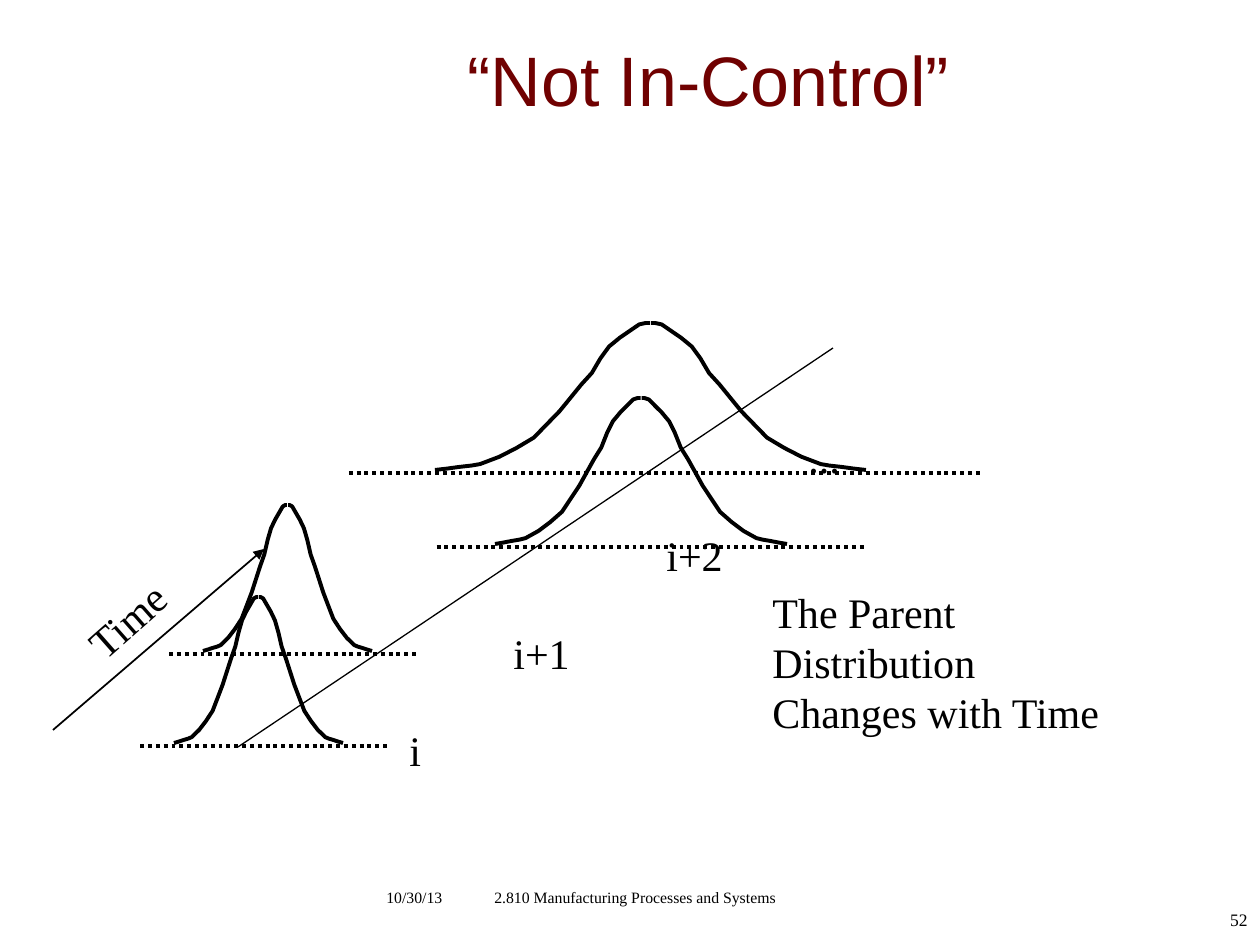
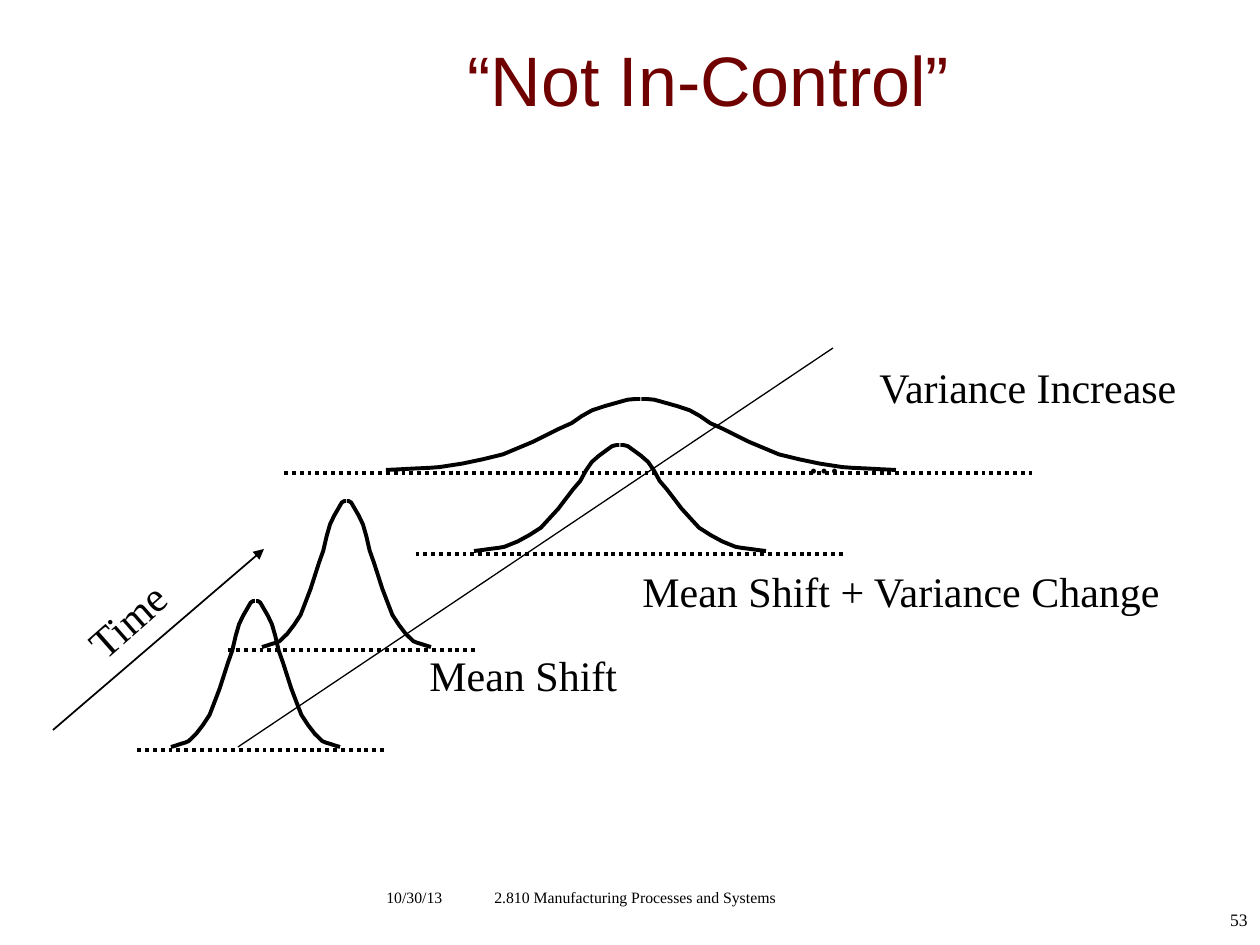
import pptx
import pptx.util
import pptx.dml.color
import pptx.enum.dml
import pptx.enum.shapes
import pptx.enum.text
import pptx.oxml
import pptx.oxml.ns

BLACK = pptx.dml.color.RGBColor(0x00, 0x00, 0x00)
MAROON = pptx.dml.color.RGBColor(0x70, 0x01, 0x01)
SERIF = "Times New Roman"
SANS = "Arial"
ALIGN = pptx.enum.text.PP_ALIGN
DOTS = pptx.enum.dml.MSO_LINE.ROUND_DOT
SCALE = 914400 / 126  # EMU in one px

TITLE = "“Not In-Control”"
TITLE_BOX = (231, 21, 955, 116)
FIRST = 52

# text, box (left, top, width, height), size, alignment
FOOT = [
    ("2.810 Manufacturing Processes and Systems", (252, 882, 766, 42), 9, ALIGN.CENTER),
    ("10/30/13", (374, 882, 179, 32), 9, ALIGN.LEFT),
]
PAGE_BOX = (1155, 903, 105, 42)

DEPTH = (238, 747, 833, 348)
ARROW = (53, 730, 264, 549)
TIME_BOX = (71, 588, 113, 63)
TIME_TURN = 318.6
MORE_BOX = (796, 425, 57, 63)

# bells: left, top, width, height; labels: text, box, wrap
SLIDES = [
    {
        "bells": [(174, 597, 169, 146), (203, 505, 169, 146),
                  (495, 398, 292, 146), (435, 323, 431, 147)],
        "labels": [
            ("i", (397, 718, 37, 63), False),
            ("i+1", (501, 621, 82, 63), False),
            ("i+2", (654, 523, 82, 63), False),
            ("The Parent Distribution Changes with Time", (760, 580, 367, 164), True),
        ],
    },
    {
        "bells": [(171, 601, 169, 146), (262, 501, 169, 146),
                  (474, 445, 292, 106), (386, 399, 510, 71)],
        "labels": [
            ("Mean Shift", (417, 643, 213, 63), False),
            ("Mean Shift + Variance Change", (630, 559, 548, 63), False),
            ("Variance Increase", (867, 355, 328, 63), False),
        ],
    },
]

# Half a bell from foot to peak, in percent of its width and of its drop
RUN = [0, 6, 11, 17, 21, 30, 38, 46, 52, 58, 63, 68, 73, 77, 81, 86, 91, 93, 95, 98, 100]
DROP = [100, 99, 98, 97, 96, 91, 85, 78, 69, 60, 51, 42, 34, 24, 16, 10, 5, 3, 1, 0, 0]


def emu(*vals):
    return [round(val * SCALE) for val in vals]


def style(para, size, font, color, align=ALIGN.LEFT):
    para.alignment = align
    para.font.size = pptx.util.Pt(size)
    para.font.name = font
    para.font.color.rgb = color


def ink(line, width):
    line.color.rgb = BLACK
    line.width = pptx.util.Pt(width)


def write(slide, text, box, size=24, align=ALIGN.LEFT, wrap=True):
    shape = slide.shapes.add_textbox(*emu(*box))
    frame = shape.text_frame
    frame.word_wrap = wrap
    frame.text = text
    style(frame.paragraphs[0], size, SERIF, BLACK, align)
    return shape


def draw(shapes, ends, width, dash=None, arrow=False):
    kind = pptx.enum.shapes.MSO_CONNECTOR.STRAIGHT
    line = shapes.add_connector(kind, *emu(*ends))
    ink(line.line, width)
    if dash:
        line.line.dash_style = dash
    props = line._element.spPr
    space = pptx.oxml.ns.nsdecls("a")
    if arrow:
        tail = pptx.oxml.parse_xml(f'<a:tailEnd {space} type="triangle"/>')
        line.line._get_or_add_ln().append(tail)
    props.append(pptx.oxml.parse_xml(f"<a:effectLst {space}/>"))


def bell(slide, left, top, width, height):
    """Two mirrored halves over a dotted base that reaches past both feet."""
    group = slide.shapes.add_group_shape().shapes
    mid, right = left + width / 2, left + width
    for foot, peak in ((left, mid - 0.5), (right, mid + 0.5)):
        pts = [emu(foot + (peak - foot) * run / 100, top + height * drop / 100)
               for run, drop in zip(RUN, DROP)]
        path = group.build_freeform(*pts[0])
        path.add_line_segments(pts[1:], close=False)
        half = path.convert_to_shape()
        half.shadow.inherit = False
        half.fill.background()
        ink(half.line, 2.25)
    base = top + height + 3
    draw(group, (left - 0.2 * width, base, right + 0.27 * width, base), 2.25, DOTS)


def head(slide):
    title = slide.shapes.title
    title.left, title.top, title.width, title.height = emu(*TITLE_BOX)
    title.text_frame.text = TITLE
    title.text_frame.vertical_anchor = pptx.enum.text.MSO_ANCHOR.MIDDLE
    style(title.text_frame.paragraphs[0], 40, SANS, MAROON, ALIGN.CENTER)


def main():
    deck = pptx.Presentation()
    deck.slide_width, deck.slide_height = emu(1260, 945)
    for page, data in enumerate(SLIDES, FIRST):
        slide = deck.slides.add_slide(deck.slide_layouts[5])
        head(slide)
        for text, box, size, align in FOOT:
            write(slide, text, box, size, align)
        write(slide, str(page), PAGE_BOX, 10, ALIGN.RIGHT)
        draw(slide.shapes, DEPTH, 0.75)
        for part in data["bells"]:
            bell(slide, *part)
        for text, box, wrap in data["labels"]:
            write(slide, text, box, wrap=wrap)
        write(slide, "...", MORE_BOX, wrap=False)
        draw(slide.shapes, ARROW, 1, arrow=True)
        write(slide, "Time", TIME_BOX, wrap=False).rotation = TIME_TURN
    deck.save("out.pptx")


if __name__ == "__main__":
    main()
